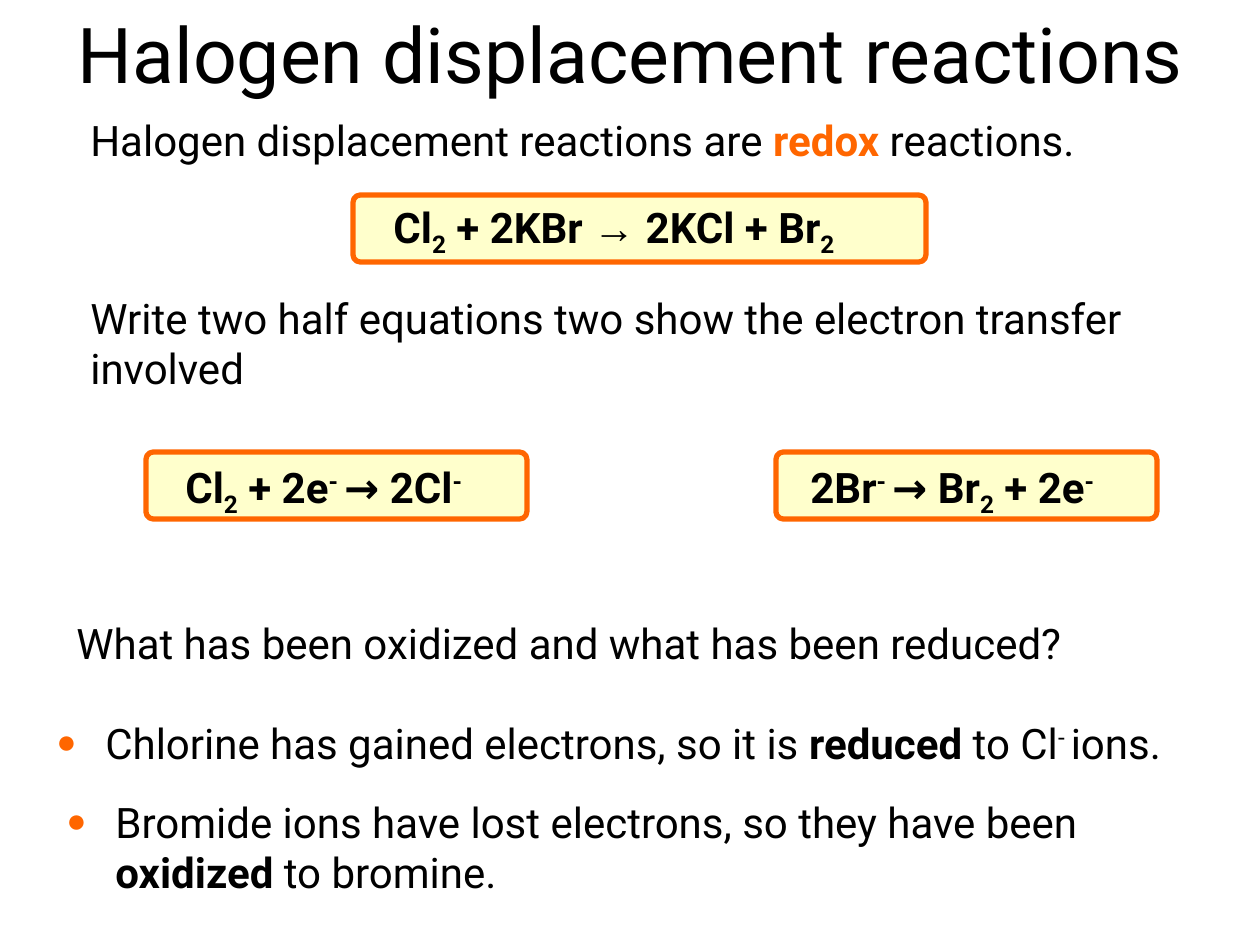
from lxml import etree
from pptx import Presentation
from pptx.dml.color import RGBColor
from pptx.enum.shapes import MSO_SHAPE
from pptx.enum.text import MSO_ANCHOR, PP_ALIGN
from pptx.oxml.ns import qn
from pptx.util import Pt

ROUNDED = MSO_SHAPE.ROUNDED_RECTANGLE
MIDDLE = MSO_ANCHOR.MIDDLE
TOP = MSO_ANCHOR.TOP
CENTER = PP_ALIGN.CENTER
LEFT = PP_ALIGN.LEFT

PX = 914400 / 126
COLORS = {"text": "000000", "accent": "FF6600", "panel": "FFFFCC"}
BASELINES = {"sub": "-25000", "sup": "30000"}


class SlideWriter:
    """Holds the slide style and adds each kind of element to the current page."""

    font = "Roboto"
    symbol_font = "Arial"
    body_size = 24
    title_size = 44
    indent = 49

    def __init__(self, page):
        self.page = page

    def emu(self, *lengths):
        return [round(length * PX) for length in lengths]

    def color(self, name):
        return RGBColor.from_string(COLORS[name])

    def panel(self, shapes, place):
        box = shapes.add_shape(ROUNDED, *self.emu(*place))
        box.adjustments[0] = 0.11
        box.shadow.inherit = False
        box.fill.solid()
        box.fill.fore_color.rgb = self.color("panel")
        box.line.color.rgb = self.color("accent")
        box.line.width = Pt(3)

    def text(self, shapes, place, spans, size=body_size, bold=False, align=LEFT, anchor=TOP):
        frame = shapes.add_textbox(*self.emu(*place)).text_frame
        frame.word_wrap = True
        frame.vertical_anchor = anchor
        para = frame.paragraphs[0]
        para.alignment = align
        para.font.name = self.font
        para.font.size = Pt(size)
        para.font.bold = bold
        para.font.color.rgb = self.color("text")
        for words, style in spans:
            self.span(para, words, style)
        return para

    def span(self, para, words, style):
        span = para.add_run()
        span.text = words
        if style in BASELINES:
            span._r.get_or_add_rPr().set("baseline", BASELINES[style])
        elif style == "symbol":
            span.font.name = self.symbol_font
        elif style in ("strong", "accent"):
            span.font.bold = True
            if style == "accent":
                span.font.color.rgb = self.color("accent")

    def title(self, place, words):
        self.text(self.page.shapes, place, [(words, "")], self.title_size, align=CENTER, anchor=MIDDLE)

    def body(self, place, *spans):
        return self.text(self.page.shapes, place, spans)

    def bullet(self, place, *spans):
        properties = self.body(place, *spans)._p.get_or_add_pPr()
        indent, = self.emu(self.indent)
        properties.set("marL", str(indent))
        properties.set("indent", str(-indent))
        tint = etree.Element(qn("a:buClr"))
        etree.SubElement(tint, qn("a:srgbClr"), val=COLORS["accent"])
        scale = etree.Element(qn("a:buSzPct"), val="80000")
        typeface = etree.Element(qn("a:buFont"), typeface=self.symbol_font)
        mark = etree.Element(qn("a:buChar"), char="●")
        for position, element in enumerate((tint, scale, typeface, mark)):
            properties.insert(position, element)

    def equation(self, panel_place, text_place, *spans):
        shapes = self.page.shapes.add_group_shape().shapes
        self.panel(shapes, panel_place)
        self.text(shapes, text_place, spans, bold=True)


def main():
    deck = Presentation()
    deck.slide_width, deck.slide_height = round(1260 * PX), round(945 * PX)
    writer = SlideWriter(deck.slides.add_slide(deck.slide_layouts[6]))

    writer.title((64, 0, 1134, 106), "Halogen displacement reactions")
    writer.body(
        (78, 108, 1106, 63),
        ("Halogen displacement reactions are ", ""), ("redox", "accent"), (" reactions.", ""),
    )
    writer.equation(
        (353, 195, 573, 67), (381, 195, 596, 63),
        ("Cl", ""), ("2", "sub"), (" + 2KBr ", ""), ("→", "symbol"),
        (" 2KCl + Br", ""), ("2", "sub"),
    )
    writer.body(
        (78, 286, 1129, 115),
        ("Write two half equations two show the electron transfer involved", ""),
    )
    writer.equation(
        (146, 452, 381, 67), (173, 455, 355, 64),
        ("Cl", ""), ("2", "sub"), (" + 2e", ""), ("- ", "sup"), ("→ 2Cl", ""), ("-", "sup"),
    )
    writer.equation(
        (776, 452, 381, 67), (798, 455, 368, 64),
        ("2Br", ""), ("- ", "sup"), ("→ Br", ""), ("2", "sub"), (" + 2e", ""), ("-", "sup"),
    )
    writer.body((64, 611, 1028, 63), ("What has been oxidized and what has been reduced?", ""))
    writer.bullet(
        (44, 711, 1182, 63),
        ("Chlorine has gained electrons, so it is ", ""), ("reduced", "strong"),
        (" to Cl", ""), ("- ", "sup"), ("ions.", ""),
    )
    writer.bullet(
        (54, 790, 1144, 115),
        ("Bromide ions have lost electrons, so they have been ", ""), ("oxidized", "strong"),
        (" to bromine.", ""),
    )
    deck.save("out.pptx")


if __name__ == "__main__":
    main()
